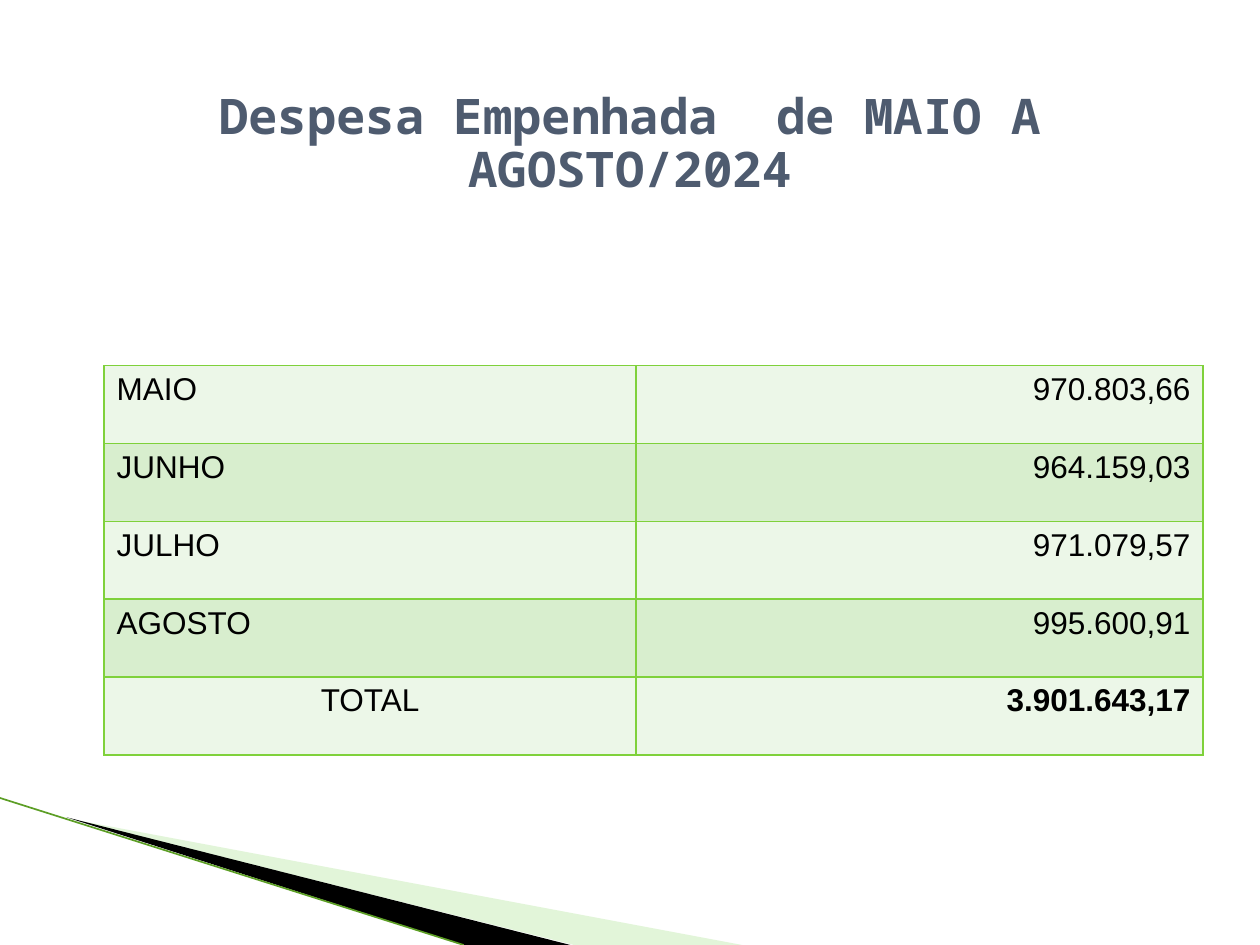
from dataclasses import dataclass

from lxml import etree
from pptx import Presentation
from pptx.dml.color import RGBColor
from pptx.enum.shapes import MSO_CONNECTOR
from pptx.enum.text import MSO_ANCHOR, MSO_AUTO_SIZE, PP_ALIGN
from pptx.oxml.ns import qn
from pptx.slide import Slide
from pptx.util import Pt

LEFT, CENTER, RIGHT = PP_ALIGN.LEFT, PP_ALIGN.CENTER, PP_ALIGN.RIGHT
TOP = MSO_ANCHOR.TOP
NO_AUTOFIT = MSO_AUTO_SIZE.NONE
STRAIGHT = MSO_CONNECTOR.STRAIGHT
TITLE_ONLY = 5

EXPENSES = [
    ("MAIO", "970.803,66"),
    ("JUNHO", "964.159,03"),
    ("JULHO", "971.079,57"),
    ("AGOSTO", "995.600,91"),
    ("TOTAL", "3.901.643,17"),
]


def rgb(value):
    return RGBColor.from_string(value)


@dataclass
class ExpenseSlide:
    """Holds the style and the current slide, and adds each kind of element."""

    slide: Slide
    title_font: str = "Noto Sans Mono"
    body_font: str = "Arial"
    title_color: str = "4E5B6F"
    ink: str = "000000"
    border: str = "7FD13B"
    bands: tuple = ("ECF7E8", "D8EECE")

    def add_text(self, paragraph, text, font, size, color, bold, align):
        paragraph.alignment = align
        run = paragraph.add_run()
        run.text = text
        run.font.name = font
        run.font.size = Pt(size)
        run.font.bold = bold
        run.font.color.rgb = rgb(color)

    def title(self, text, left, top, width, height):
        heading = self.slide.shapes.title
        heading.left, heading.top = Pt(left), Pt(top)
        heading.width, heading.height = Pt(width), Pt(height)
        frame = heading.text_frame
        frame.word_wrap = True
        frame.auto_size = NO_AUTOFIT
        frame.vertical_anchor = TOP
        paragraph = frame.paragraphs[0]
        paragraph.line_spacing = 0.9
        self.add_text(paragraph, text, self.title_font, 28, self.title_color, True, CENTER)

    def wedge(self, corners, color, opacity=100):
        start, *others = [(Pt(x), Pt(y)) for x, y in corners]
        builder = self.slide.shapes.build_freeform(*start)
        builder.add_line_segments(others, close=True)
        wedge = builder.convert_to_shape()
        wedge.shadow.inherit = False
        wedge.line.fill.background()
        wedge.fill.solid()
        wedge.fill.fore_color.rgb = rgb(color)
        if opacity < 100:
            tint = wedge._element.spPr.find(qn("a:solidFill"))[0]
            etree.SubElement(tint, qn("a:alpha"), val=str(opacity * 1000))

    def line(self, start, end, color, weight):
        points = [Pt(value) for value in (*start, *end)]
        edge = self.slide.shapes.add_connector(STRAIGHT, *points)
        edge.line.color.rgb = rgb(color)
        edge.line.width = Pt(weight)
        etree.SubElement(edge._element.spPr, qn("a:effectLst"))

    def outline(self, cell):
        properties = cell._tc.get_or_add_tcPr()
        for side in ("lnL", "lnR", "lnT", "lnB"):
            rule = etree.SubElement(properties, qn(f"a:{side}"), w=str(Pt(1)))
            fill = etree.SubElement(rule, qn("a:solidFill"))
            etree.SubElement(fill, qn("a:srgbClr"), val=self.border)

    def table(self, rows, left, top, widths, row_height):
        table = self.slide.shapes.add_table(
            len(rows), len(widths), Pt(left), Pt(top),
            Pt(sum(widths)), Pt(row_height * len(rows)),
        ).table
        table.first_row = False
        table.horz_banding = False
        for column, width in zip(table.columns, widths):
            column.width = Pt(width)
        for r, values in enumerate(rows):
            table.rows[r].height = Pt(row_height)
            is_total = r == len(rows) - 1
            alignments = (CENTER if is_total else LEFT, RIGHT)
            for c, (text, align) in enumerate(zip(values, alignments)):
                cell = table.cell(r, c)
                self.outline(cell)
                cell.fill.solid()
                cell.fill.fore_color.rgb = rgb(self.bands[r % 2])
                self.add_text(cell.text_frame.paragraphs[0], text, self.body_font, 18,
                              self.ink, is_total and c == 1, align)


def main():
    deck = Presentation()
    deck.slide_width, deck.slide_height = Pt(720), Pt(540)
    page = ExpenseSlide(deck.slides.add_slide(deck.slide_layouts[TITLE_ONLY]))
    page.wedge([(40, 468), (424, 540), (328, 540)], "B8E7A1", opacity=40)
    page.wedge([(38, 467), (326, 540), (265, 540)], page.ink)
    page.line((0, 456), (265, 540), "5C9E25", 0.95)
    page.title("Despesa Empenhada  de MAIO A AGOSTO/2024", 54, 49, 612, 85)
    page.table(EXPENSES, 59.5, 209, (304, 324), 44.5)
    deck.save("out.pptx")


if __name__ == "__main__":
    main()
